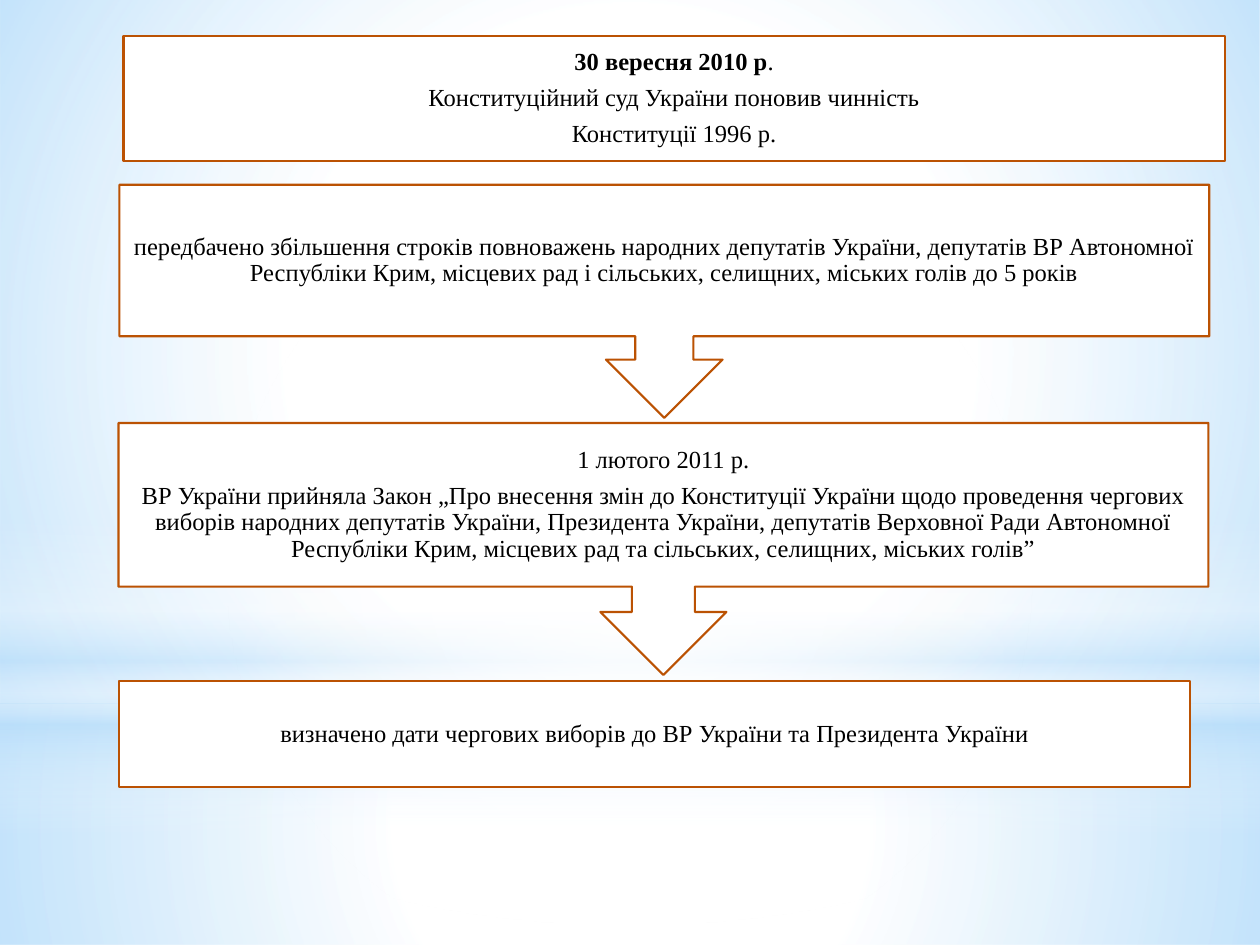
from lxml import etree
from pptx import Presentation
from pptx import util as u
from pptx.dml.color import RGBColor
from pptx.enum import shapes, text
from pptx.oxml import ns

KIND = shapes.MSO_SHAPE
WHITE, SKY, RUST, BLACK = "FFFFFF", "B4DCFA", "BB5203", "000000"
ROUND = ("path", {"path": "circle"})
DOWN = ("lin", {"ang": "5400000", "scaled": "0"})


def paint(code):
    return RGBColor.from_string(code)


def apply(obj, style):
    for name, value in style.items():
        setattr(obj, name, value)


def sub(parent, tag, **attrs):
    return etree.SubElement(parent, ns.qn("a:" + tag), attrs)


class Deck:
    frame = {"word_wrap": True, "vertical_anchor": text.MSO_ANCHOR.MIDDLE,
             "margin_left": u.Pt(1), "margin_right": u.Pt(1),
             "margin_top": u.Pt(1), "margin_bottom": u.Pt(1)}
    para = {"alignment": text.PP_ALIGN.CENTER, "line_spacing": 0.9,
            "space_after": u.Pt(5.5)}
    font = {"name": "Times New Roman", "size": u.Pt(14)}

    def __init__(self, wide, high):
        self.prs = Presentation()
        apply(self.prs, {"slide_width": u.Pt(wide), "slide_height": u.Pt(high)})
        self.slide = self.prs.slides.add_slide(self.prs.slide_layouts[6])

    def shape(self, kind, *area):
        item = self.slide.shapes.add_shape(kind, *map(u.Pt, area))
        item.shadow.inherit = False
        return item

    def glow(self, kind, area, stops, mode):
        """Borderless shape with a gradient; stops are place, colour, opacity."""
        item = self.shape(kind, *area)
        item.line.fill.background()
        item.fill.background()
        props = item.fill._xPr
        old = props.find(ns.qn("a:noFill"))
        grad = etree.Element(ns.qn("a:gradFill"), rotWithShape="1")
        props.replace(old, grad)
        row = sub(grad, "gsLst")
        for place, code, alpha in stops:
            stop = sub(row, "gs", pos=str(place * 1000))
            tint = sub(stop, "srgbClr", val=code)
            sub(tint, "alpha", val=str(alpha * 1000))
        tag, attrs = mode
        path = sub(grad, tag, **attrs)
        if tag == "path":
            sub(path, "fillToRect", l="50000", t="50000", r="50000", b="50000")

    def box(self, kind, area, lines):
        """Outlined box; each line is a list of (words, bold) runs."""
        item = self.shape(kind, *area)
        item.fill.solid()
        item.fill.fore_color.rgb = paint(WHITE)
        item.line.color.rgb = paint(RUST)
        item.line.width = u.Pt(1.25)
        body = item.text_frame
        apply(body, self.frame)
        for i, line in enumerate(lines):
            para = body.add_paragraph() if i else body.paragraphs[0]
            apply(para, self.para)
            for words, bold in line:
                run = para.add_run()
                run.text = words
                apply(run.font, {**self.font, "bold": bold})
                run.font.color.rgb = paint(BLACK)


def main():
    deck = Deck(720, 540)

    # Background glow
    deck.glow(KIND.RECTANGLE, (0, 401.8, 720, 138.2),
              [(0, WHITE, 91), (37, WHITE, 76), (100, SKY, 79)], ROUND)
    deck.glow(KIND.RECTANGLE, (0, 0, 720, 401.8),
              [(0, WHITE, 89), (48, WHITE, 62), (100, SKY, 79)], ROUND)
    deck.glow(KIND.RECTANGLE, (0, 296.6, 720, 180),
              [(0, WHITE, 0), (29, WHITE, 30), (45, SKY, 40),
               (55, WHITE, 26), (65, SKY, 60), (100, WHITE, 0)], DOWN)
    deck.glow(KIND.OVAL, (0, 126, 720, 401.8),
              [(0, WHITE, 100), (56, WHITE, 0)], ROUND)

    # Court ruling
    deck.box(KIND.RECTANGLE, (70.6, 20.8, 629.2, 71.2), [
        [("30 вересня 2010 р", True), (".", False)],
        [("Конституційний суд України поновив чинність", False)],
        [("Конституції 1996 р.", False)]])

    # Steps that lead down to the outcome
    deck.box(KIND.DOWN_ARROW_CALLOUT, (68.2, 105.6, 622.8, 133.2), [
        [("передбачено збільшення строків повноважень народних депутатів "
          "України, депутатів ВР Автономної Республіки Крим, місцевих рад "
          "і сільських, селищних, міських голів до 5 років", False)]])
    deck.box(KIND.DOWN_ARROW_CALLOUT, (67.7, 241.7, 622.8, 144), [
        [("1 лютого 2011 р.", False)],
        [("ВР України прийняла Закон „Про внесення змін до Конституції "
          "України щодо проведення чергових виборів народних депутатів "
          "України, Президента України, депутатів Верховної Ради Автономної "
          "Республіки Крим, місцевих рад та сільських, селищних, міських "
          "голів”", False)]])

    # Outcome
    deck.box(KIND.RECTANGLE, (68.2, 389, 612, 61), [
        [("визначено дати чергових виборів до ВР України та Президента "
          "України", False)]])

    deck.prs.save("out.pptx")


if __name__ == "__main__":
    main()
